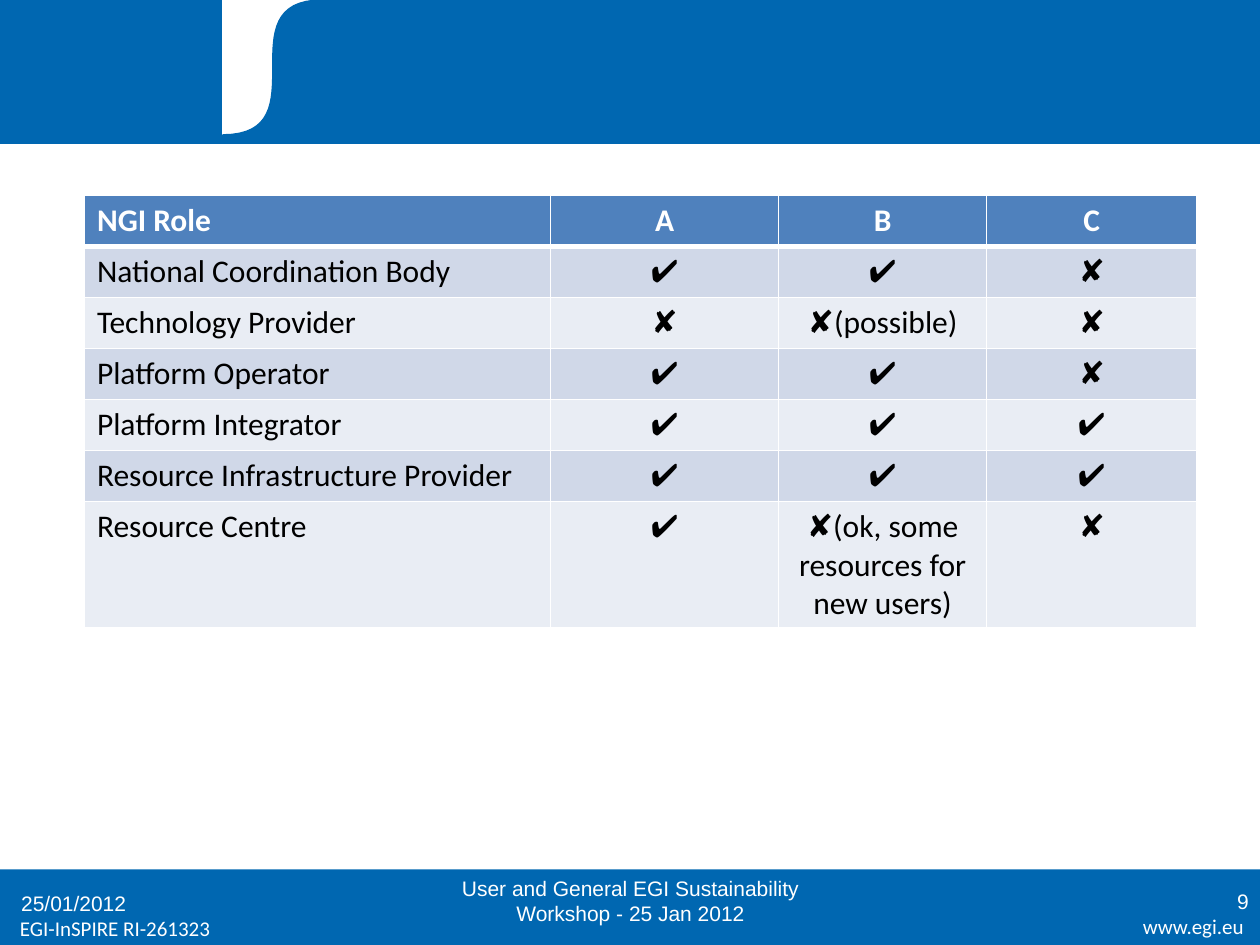
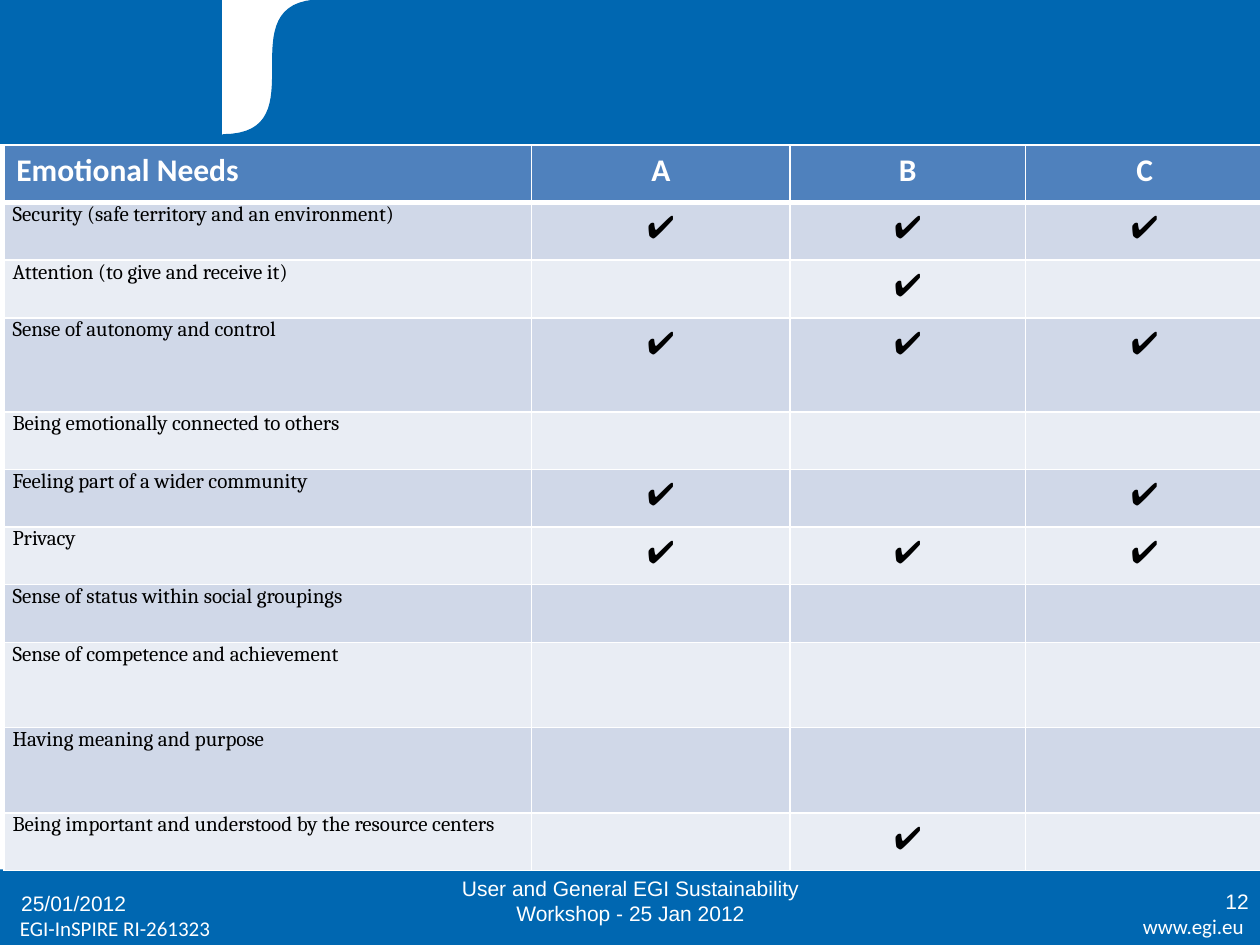
import lxml.etree
import pptx
import pptx.dml.color
import pptx.enum.shapes
import pptx.enum.text
import pptx.oxml.ns
import pptx.util

RGBColor = pptx.dml.color.RGBColor
BLUE = RGBColor(0x00, 0x67, 0xB1)
HEADER_BLUE = RGBColor(0x4F, 0x81, 0xBD)
DARK_BAND = RGBColor(0xD0, 0xD8, 0xE8)
LIGHT_BAND = RGBColor(0xE9, 0xED, 0xF4)
WHITE = RGBColor(0xFF, 0xFF, 0xFF)
BLACK = RGBColor(0x00, 0x00, 0x00)

LEFT = pptx.enum.text.PP_ALIGN.LEFT
CENTER = pptx.enum.text.PP_ALIGN.CENTER
RIGHT = pptx.enum.text.PP_ALIGN.RIGHT
TOP = pptx.enum.text.MSO_ANCHOR.TOP
MIDDLE = pptx.enum.text.MSO_ANCHOR.MIDDLE

WIDTH = pptx.util.Inches(10)
HEIGHT = pptx.util.Inches(7.5)
CURVE_STEPS = 32

FOOTER_FONT = {"name": "Arial", "size": pptx.util.Pt(12)}
PROJECT_FONT = {"name": "Calibri", "size": pptx.util.Pt(12)}
HEADER_FONT = {"name": "Calibri", "size": pptx.util.Pt(18), "bold": True}
ROLE_FONT = {"name": "Calibri", "size": pptx.util.Pt(18), "bold": False}
NEED_FONT = {"name": "Cambria", "size": pptx.util.Pt(12), "bold": False}
NEED_MARGINS = {
    "margin_left": pptx.util.Inches(0.07),
    "margin_right": pptx.util.Inches(0.07),
    "margin_top": 0,
    "margin_bottom": 0,
}

YES, NO = "✔", "✘"
ROLES = [
    ("NGI Role", "A", "B", "C"),
    ("National Coordination Body", YES, YES, NO),
    ("Technology Provider", NO, NO + "(possible)", NO),
    ("Platform Operator", YES, YES, NO),
    ("Platform Integrator", YES, YES, YES),
    ("Resource Infrastructure Provider", YES, YES, YES),
    ("Resource Centre", YES, NO + "(ok, some resources for new users)", NO),
]
NEEDS = [
    ("Emotional Needs", "A", "B", "C"),
    ("Security (safe territory and an environment)", YES, YES, YES),
    ("Attention (to give and receive it)", "", YES, ""),
    ("Sense of autonomy and control", YES, YES, YES),
    ("Being emotionally connected to others", "", "", ""),
    ("Feeling part of a wider community", YES, "", YES),
    ("Privacy", YES, YES, YES),
    ("Sense of status within social groupings", "", "", ""),
    ("Sense of competence and achievement", "", "", ""),
    ("Having meaning and purpose", "", "", ""),
    ("Being important and understood by the resource centers", "", YES, ""),
]
NEED_ROW, TALL_ROW, TALLEST_ROW = 6.1, 9.02, 9.95
NEED_ROWS = [NEED_ROW] * 3 + [TALLEST_ROW] + [NEED_ROW] * 4 + [TALL_ROW] * 2 + [NEED_ROW]


def across(percent):
    return int(WIDTH * percent / 100)


def down(percent):
    return int(HEIGHT * percent / 100)


def place(left, top, width, height):
    return across(left), down(top), across(width), down(height)


def set_values(target, values):
    for name, value in values.items():
        setattr(target, name, value)


def paint(shape, color, outlined=True):
    shape.shadow.inherit = False
    shape.fill.solid()
    shape.fill.fore_color.rgb = color
    if outlined:
        shape.line.color.rgb = color
        shape.line.width = pptx.util.Pt(0.75)
    else:
        shape.line.fill.background()


def add_band(page, area, color, outlined=True):
    rectangle = pptx.enum.shapes.MSO_SHAPE.RECTANGLE
    paint(page.shapes.add_shape(rectangle, *place(*area)), color, outlined)


def bezier(start, first, second, end, share):
    rest = 1 - share
    weights = (rest ** 3, 3 * rest ** 2 * share, 3 * rest * share ** 2, share ** 3)
    points = (start, first, second, end)
    return tuple(sum(w * point[axis] for w, point in zip(weights, points)) for axis in (0, 1))


def add_swoosh(page):
    left, bend, right, bottom = across(17.7), across(25.6), across(37.4), down(14.27)
    curve = [
        bezier((left, bottom), (bend, bottom), (left, 0), (bend, 0), step / CURVE_STEPS)
        for step in range(CURVE_STEPS + 1)
    ]
    builder = page.shapes.build_freeform(right, 0)
    builder.add_line_segments([(right, bottom)] + curve, close=True)
    paint(builder.convert_to_shape(), BLUE)


def fill_text(frame, text, font, color, align):
    para = frame.paragraphs[0]
    para.alignment = align
    span = para.add_run()
    span.text = text
    set_values(span.font, font)
    span.font.color.rgb = color


def add_label(page, area, text, font, align, anchor):
    box = page.shapes.add_textbox(*place(*area))
    set_values(box.text_frame, {"word_wrap": True, "vertical_anchor": anchor})
    fill_text(box.text_frame, text, font, WHITE, align)


def add_borders(cell, points_by_side):
    properties = cell._tc.get_or_add_tcPr()
    for side, points in points_by_side.items():
        line = lxml.etree.SubElement(properties, pptx.oxml.ns.qn("a:ln" + side))
        line.set("w", str(pptx.util.Pt(points)))
        fill = lxml.etree.SubElement(line, pptx.oxml.ns.qn("a:solidFill"))
        color = lxml.etree.SubElement(fill, pptx.oxml.ns.qn("a:srgbClr"))
        color.set("val", str(WHITE))


def format_cell(cell, text, row, column, label_font, label_margins):
    header = row == 0
    add_borders(cell, {"L": 1, "R": 1, "T": 1, "B": 3} if header else {"L": 1, "R": 1, "B": 1})
    cell.fill.solid()
    cell.fill.fore_color.rgb = HEADER_BLUE if header else (LIGHT_BAND, DARK_BAND)[row % 2]
    is_label = column == 0 and not header
    if is_label:
        set_values(cell, label_margins)
    if text:
        font = HEADER_FONT if header else label_font if is_label else ROLE_FONT
        color = WHITE if header else BLACK
        fill_text(cell.text_frame, text, font, color, CENTER if column else LEFT)


def add_grid(page, left, top, columns, heights, rows, label_font, label_margins):
    area = place(left, top, sum(columns), sum(heights))
    table = page.shapes.add_table(len(rows), len(columns), *area).table
    for column, width in zip(table.columns, columns):
        column.width = across(width)
    for row, height in zip(table.rows, heights):
        row.height = down(height)
    for row, texts in enumerate(rows):
        for column, text in enumerate(texts):
            format_cell(table.cell(row, column), text, row, column, label_font, label_margins)


def add_page(deck):
    page = deck.slides.add_slide(deck.slide_layouts[6])
    add_band(page, (0, 92, 100, 8), BLUE, outlined=False)
    add_band(page, (0, 0, 100, 15.2), BLUE)
    add_band(page, (17.7, 0, 19.7, 14.27), WHITE)
    add_swoosh(page)
    add_label(page, (83.9, 96, 15.8, 4.13), "www.egi.eu", PROJECT_FONT, RIGHT, TOP)
    add_label(page, (0.6, 96.27, 25, 4.13), "EGI-InSPIRE RI-261323", PROJECT_FONT, LEFT, TOP)
    return page


def add_footer(page, number):
    event = "User and General EGI Sustainability Workshop - 25 Jan 2012"
    add_label(page, (0.7, 92.93, 23.3, 5.33), "25/01/2012", FOOTER_FONT, LEFT, MIDDLE)
    add_label(page, (34.2, 92.67, 31.7, 5.33), event, FOOTER_FONT, CENTER, MIDDLE)
    add_label(page, (76.8, 92.67, 23.3, 5.33), str(number), FOOTER_FONT, RIGHT, MIDDLE)


def main():
    deck = pptx.Presentation()
    set_values(deck, {"slide_width": WIDTH, "slide_height": HEIGHT})

    page = add_page(deck)
    add_grid(page, 6.7, 20.67, (37, 18.1, 16.5, 16.7), [5.4] * len(ROLES), ROLES, ROLE_FONT, {})
    add_footer(page, 9)

    page = add_page(deck)
    add_grid(page, 0.3, 15.33, (41.9, 20.5, 18.7, 18.9), NEED_ROWS, NEEDS, NEED_FONT, NEED_MARGINS)
    add_footer(page, 12)

    deck.save("out.pptx")


if __name__ == "__main__":
    main()
